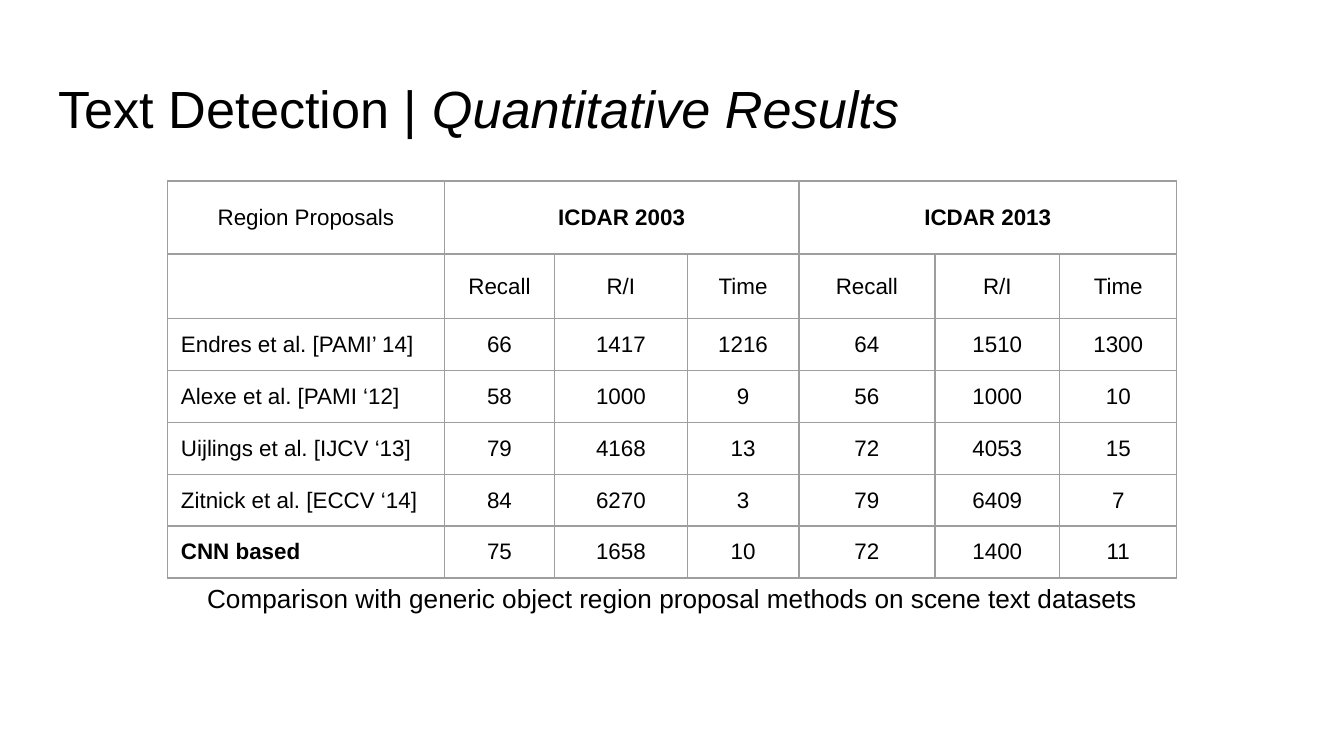
from dataclasses import dataclass

from lxml import etree
from pptx import Presentation
from pptx.dml.color import RGBColor
from pptx.enum.text import MSO_ANCHOR, MSO_AUTO_SIZE, PP_ALIGN
from pptx.oxml.ns import qn
from pptx.util import Cm, Pt

MIDDLE = MSO_ANCHOR.MIDDLE
NO_AUTOFIT = MSO_AUTO_SIZE.NONE
LEFT = PP_ALIGN.LEFT
CENTER = PP_ALIGN.CENTER
BLACK = RGBColor(0x00, 0x00, 0x00)
GRAY = RGBColor(0x9E, 0x9E, 0x9E)
FONT = "Arial"
WIDE_INSET = (0.25, 0.25)
TIGHT_INSET = (0.08, 0.05)
THIN = 0.75
THICK = 1.5


@dataclass(frozen=True)
class Method:
    name: str
    scores: tuple[int, ...]
    bold: bool = False


METHODS = (
    Method("Endres et al. [PAMI’ 14]", (66, 1417, 1216, 64, 1510, 1300)),
    Method("Alexe et al. [PAMI ‘12]", (58, 1000, 9, 56, 1000, 10)),
    Method("Uijlings et al. [IJCV ‘13]", (79, 4168, 13, 72, 4053, 15)),
    Method("Zitnick et al. [ECCV ‘14]", (84, 6270, 3, 79, 6409, 7)),
    Method("CNN based", (75, 1658, 10, 72, 1400, 11), bold=True),
)
DATASETS = ("ICDAR 2003", "ICDAR 2013")
MEASURES = ("Recall", "R/I", "Time")
COLUMN_WIDTHS = (5.23, 2.08, 2.51, 2.11, 2.57, 2.36, 2.21)
ROW_HEIGHTS = (1.38, 1.22) + (0.98,) * len(METHODS)


def format_paragraph(paragraph, size: float, align: PP_ALIGN, bold: bool = False) -> None:
    paragraph.alignment = align
    font = paragraph.font
    font.name = FONT
    font.size = Pt(size)
    font.bold = bold
    font.color.rgb = BLACK


def set_insets(target, insets: tuple[float, float]) -> None:
    target.margin_left = target.margin_right = Cm(insets[0])
    target.margin_top = target.margin_bottom = Cm(insets[1])


def set_borders(cell, top: float, bottom: float) -> None:
    properties = cell._tc.get_or_add_tcPr()
    widths = {"a:lnL": THIN, "a:lnR": THIN, "a:lnT": top, "a:lnB": bottom}
    for side, width in widths.items():
        line = etree.SubElement(properties, qn(side), w=str(Pt(width)))
        fill = etree.SubElement(line, qn("a:solidFill"))
        etree.SubElement(fill, qn("a:srgbClr"), val=str(GRAY))


def write_cell(cell, text: str, align: PP_ALIGN = CENTER, bold: bool = False,
               insets: tuple[float, float] = WIDE_INSET) -> None:
    cell.text = text
    cell.vertical_anchor = MIDDLE
    set_insets(cell, insets)
    format_paragraph(cell.text_frame.paragraphs[0], 12, align, bold)


def add_title(slide) -> None:
    title = slide.shapes.title
    title.left, title.top, title.width, title.height = Cm(0.86), Cm(1.24), Cm(23.67), Cm(1.6)
    frame = title.text_frame
    frame.auto_size = NO_AUTOFIT
    frame.vertical_anchor = MIDDLE
    set_insets(frame, WIDE_INSET)
    heading = frame.paragraphs[0]
    heading.add_run().text = "Text Detection | "
    topic = heading.add_run()
    topic.text = "Quantitative Results"
    topic.font.italic = True
    format_paragraph(heading, 28, LEFT)


def add_results(slide) -> None:
    results = slide.shapes.add_table(
        len(ROW_HEIGHTS), len(COLUMN_WIDTHS), Cm(3.17), Cm(3.42),
        Cm(sum(COLUMN_WIDTHS)), Cm(sum(ROW_HEIGHTS))).table
    results.first_row = False
    results.horz_banding = False
    for column, width in zip(results.columns, COLUMN_WIDTHS):
        column.width = Cm(width)
    last = len(ROW_HEIGHTS) - 1
    for index, (row, height) in enumerate(zip(results.rows, ROW_HEIGHTS)):
        row.height = Cm(height)
        for cell in row.cells:
            set_borders(cell, THICK if index == last else THIN,
                        THICK if index == last - 1 else THIN)
            cell.fill.background()

    write_cell(results.cell(0, 0), "Region Proposals")
    write_cell(results.cell(1, 0), "")
    span = len(MEASURES)
    for group, dataset in enumerate(DATASETS):
        start = 1 + group * span
        results.cell(0, start).merge(results.cell(0, start + span - 1))
        write_cell(results.cell(0, start), dataset, bold=True)
        for offset, measure in enumerate(MEASURES):
            write_cell(results.cell(1, start + offset), measure)
    for row, method in enumerate(METHODS, start=2):
        write_cell(results.cell(row, 0), method.name, LEFT, method.bold)
        for column, score in enumerate(method.scores, start=1):
            write_cell(results.cell(row, column), str(score), insets=TIGHT_INSET)


def add_caption(slide) -> None:
    caption = slide.shapes.add_textbox(Cm(3.5), Cm(10.88), Cm(18.42), Cm(0.82)).text_frame
    caption.word_wrap = True
    caption.vertical_anchor = MIDDLE
    set_insets(caption, WIDE_INSET)
    sentence = caption.paragraphs[0]
    sentence.text = "Comparison with generic object region proposal methods on scene text datasets"
    format_paragraph(sentence, 14, CENTER)


def main() -> None:
    presentation = Presentation()
    presentation.slide_width = Cm(25.4)
    presentation.slide_height = Cm(14.28)
    slide = presentation.slides.add_slide(presentation.slide_layouts[5])
    add_title(slide)
    add_results(slide)
    add_caption(slide)
    presentation.save("out.pptx")


if __name__ == "__main__":
    main()
